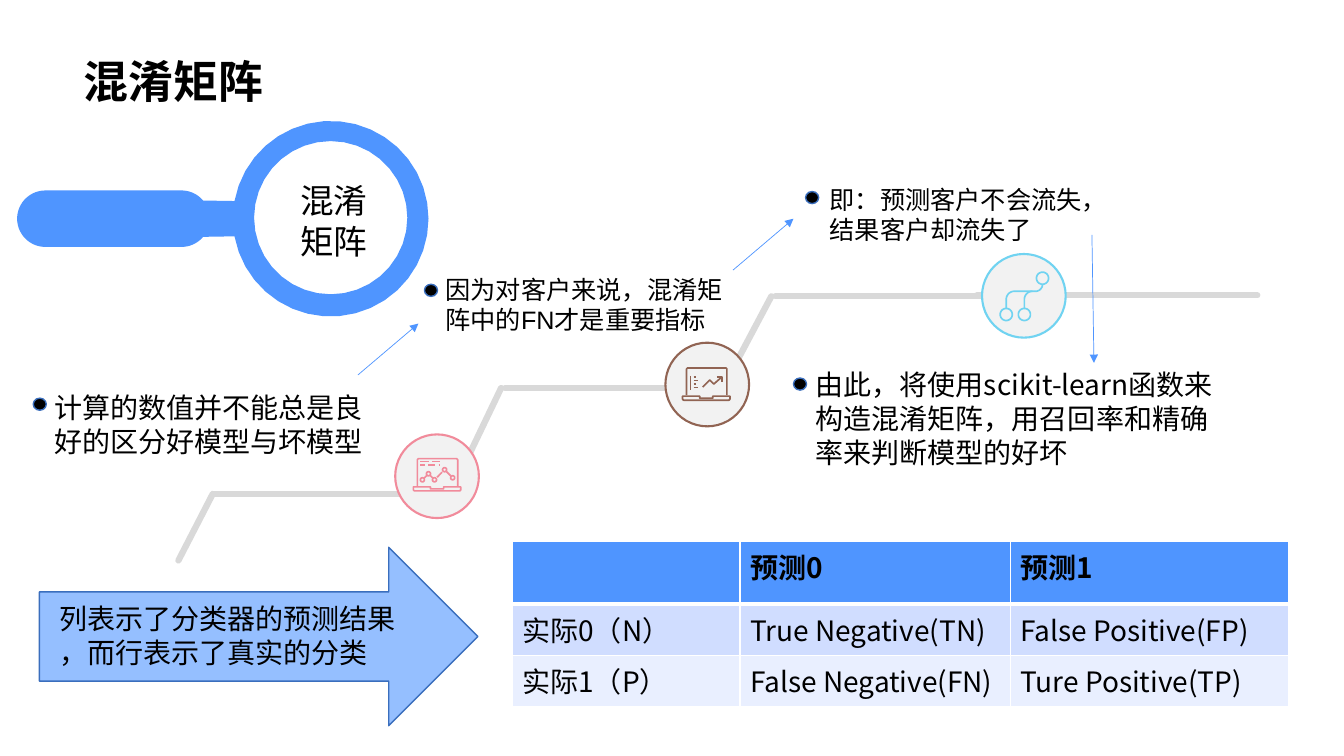
from math import cos, radians, sin
from lxml.etree import SubElement as Sub
from pptx import Presentation
from pptx.dml.color import RGBColor
from pptx.enum.shapes import MSO_CONNECTOR as Link, MSO_SHAPE as Shape
from pptx.enum.text import MSO_ANCHOR as Anchor, PP_ALIGN as Align
from pptx.oxml.ns import qn
from pptx.util import Inches, Pt


def paint(fmt, tone):
    fmt.solid()
    fmt.fore_color.rgb = RGBColor.from_string(tone)


def arc(x, y, r, start=0, end=360):
    turns = [radians(start + (end - start) * i / 36) for i in range(37)]
    return [(x + r * cos(t), y + r * sin(t)) for t in turns]


prs = Presentation()
prs.slide_width, prs.slide_height = Inches(13.33), Inches(7.5)
slide = prs.slides.add_slide(prs.slide_layouts[5])
shapes = slide.shapes
BLUE, EDGE, BLACK, GREY = "4F95FF", "3A6EBD", "000000", "D9D9D9"
SANS = "Noto Sans CJK SC"
texts = []

title = shapes.title
title.left, title.top = Inches(0.73), Inches(0)
title.width, title.height = Inches(11.87), Inches(1.12)
title.text_frame.text = "混淆矩阵"
title.text_frame.vertical_anchor = Anchor.BOTTOM
title.text_frame.paragraphs[0].line_spacing = 0.9
texts.append((title.text_frame, 32, "Arial", True))

roads = [
    (7.3, 3.6, 7.65, 2.94), (7.69, 2.94, 9.87, 2.94), (9.69, 2.93, 12.47, 2.93),
    (4.51, 4.81, 4.97, 3.85), (5.01, 3.85, 7.19, 3.85),
    (1.77, 5.56, 2.11, 4.9), (2.13, 4.9, 4.3, 4.9),
]
arrows = [(3.55, 3.72, 4.15, 3.21), (7.27, 2.68, 7.87, 2.17), (10.83, 2.33, 10.85, 3.6)]
for ends in roads + arrows:
    line = shapes.add_connector(Link.STRAIGHT, *map(Inches, ends))
    road = ends in roads
    paint(line.line.fill, GREY if road else BLUE)
    line.line.width = Pt(4.5 if road else 0.5)
    props = line._element.spPr
    stroke = props.find(qn("a:ln"))
    if road:
        stroke.set("cap", "rnd")
    else:
        Sub(stroke, qn("a:tailEnd"), type="triangle")
    Sub(props, qn("a:effectLst"))

forms = [
    (Shape.OVAL, 6.6, 3.4, 0.83, 0.83, "F2F2F2", "916453", 1.5),
    (Shape.OVAL, 3.92, 4.31, 0.83, 0.83, "F2F2F2", "F18B9B", 1.5),
    (Shape.OVAL, 9.74, 2.52, 0.83, 0.83, "F2F2F2", "70D3F1", 1.5),
    (Shape.RIGHT_ARROW, 0.39, 5.43, 4.35, 1.77, "95BFFF", EDGE, 1),
]
for x, y in [(0.33, 3.95), (4.21, 2.82), (7.99, 1.9), (7.87, 3.75)]:
    forms.append((Shape.FLOWCHART_CONNECTOR, x, y, 0.13, 0.12, BLACK, EDGE, 1))
for kind, x, y, w, h, fill, edge, size in forms:
    form = shapes.add_shape(kind, *map(Inches, (x, y, w, h)))
    form.shadow.inherit = False
    paint(form.fill, fill)
    paint(form.line.fill, edge)
    form.line.width = Pt(size)

lens = [
    arc(3.28, 2.17, 0.97, 169.6, -169.6) + arc(1.8, 2.17, 0.28, -40, -90)
    + arc(0.45, 2.17, 0.28, 270, 90) + arc(1.8, 2.17, 0.28, 90, 40),
    arc(3.28, 2.16, 0.76),
]
laptop = [
    [(0.05, 0.28), (0.05, 0.02), (0.06, 0.01), (0.44, 0.01), (0.45, 0.02), (0.45, 0.28)],
    [(0.01, 0.29), (0.18, 0.29), (0.18, 0.31), (0.31, 0.31), (0.31, 0.29),
     (0.48, 0.29), (0.48, 0.32), (0.47, 0.33), (0.02, 0.33), (0.01, 0.32), (0.01, 0.29)],
]
trend = [
    [(0.09, 0.09), (0.09, 0.23)],
    [(0.21, 0.2), (0.28, 0.13), (0.32, 0.17), (0.4, 0.1)],
    [(0.35, 0.1), (0.4, 0.1), (0.4, 0.15)],
]
for i in range(4):
    trend.append([(0.12, 0.1 + i * 0.035), (0.14 + i % 2 * 0.02, 0.1 + i * 0.035)])
nodes = [(0.1, 0.22), (0.16, 0.16), (0.22, 0.22), (0.32, 0.12), (0.4, 0.2)]
chart = [arc(x, y, 0.02) for x, y in nodes]
for (x, y), (u, v) in zip(nodes, nodes[1:]):
    chart.append([(x + (u - x) * k, y + (v - y) * k) for k in (0.25, 0.75)])
for x, u, y in [(0.08, 0.17, 0.04), (0.2, 0.27, 0.04), (0.08, 0.13, 0.07),
                (0.16, 0.23, 0.07), (0.26, 0.27, 0.07)]:
    chart.append([(x, y), (u, y)])
branch = [arc(x, y, 0.06) for x, y in [(0.42, 0.07), (0.06, 0.43), (0.24, 0.43)]]
branch += [
    arc(0.35, 0.13, 0.07, 0, 90) + arc(0.14, 0.28, 0.08, 270, 180) + [(0.06, 0.37)],
    arc(0.32, 0.28, 0.08, 270, 180) + [(0.24, 0.37)],
]
icons = [
    (0, 0, lens, BLUE, True), (6.76, 3.64, laptop + trend, "916453", False),
    (4.09, 4.54, laptop + chart, "F18B9B", False), (9.92, 2.69, branch, "70D3F1", False),
]
for left, top, paths, tone, solid in icons:
    build = None
    for path in paths:
        pts = [(Inches(left + x), Inches(top + y)) for x, y in path]
        if build:
            build.move_to(*pts[0])
        else:
            build = shapes.build_freeform(*pts[0])
        build.add_line_segments(pts[1:], close=solid)
    icon = build.convert_to_shape()
    icon.shadow.inherit = False
    if solid:
        paint(icon.fill, tone)
        icon.line.fill.background()
    else:
        icon.fill.background()
        paint(icon.line.fill, tone)
        icon.line.width = Pt(1.2)

notes = [
    (0.44, 3.83, 3.27, 0.77, 20, "Arial", "计算的数值并不能总是良好的区分好模型与坏模型"),
    (4.32, 2.67, 3.13, 0.71, 18, "Arial", "因为对客户来说，混淆矩阵中的FN才是重要指标"),
    (8.13, 1.78, 2.88, 0.71, 18, "Arial", "即：预测客户不会流失，结果客户却流失了"),
    (2.88, 1.74, 1.01, 0.91, 24, "Arial", "混淆矩阵"),
    (7.99, 3.6, 4.2, 1.11, 20, SANS,
     "由此，将使用scikit-learn函数来构造混淆矩阵，用召回率和精确率来判断模型的好坏"),
    (0.49, 5.92, 3.6, 0.77, 20, "Arial", "列表示了分类器的预测结果\n，而行表示了真实的分类"),
]
for x, y, w, h, size, font, words in notes:
    frame = shapes.add_textbox(*map(Inches, (x, y, w, h))).text_frame
    frame.word_wrap = True
    frame.text = words
    texts.append((frame, size, font, False))

rows = [
    ("", "预测0", "预测1"),
    ("实际0（N）", "True Negative(TN)", "False Positive(FP)"),
    ("实际1（P）", "False Negative(FN)", "Ture Positive(TP)"),
]
grid = shapes.add_table(3, 3, *map(Inches, (5.08, 5.37, 7.7, 1.64))).table
for col, w in zip(grid.columns, (2.26, 2.68, 2.76)):
    col.width = Inches(w)
for r, (row, h, tone) in enumerate(zip(rows, (0.62, 0.51, 0.51), (BLUE, "D0DDFF", "E9EFFF"))):
    grid.rows[r].height = Inches(h)
    for c, words in enumerate(row):
        cell = grid.cell(r, c)
        cell.text_frame.text = words
        texts.append((cell.text_frame, 20, SANS, r == 0))
        props = cell._tc.get_or_add_tcPr()
        for side in "LRTB":
            thick = (r, side) in [(0, "B"), (1, "T")]
            edge = Sub(props, qn("a:ln" + side), w=str(Pt(3 if thick else 1)))
            Sub(Sub(edge, qn("a:solidFill")), qn("a:srgbClr"), val="FFFFFF")
        paint(cell.fill, tone)

for frame, size, font, bold in texts:
    for para in frame.paragraphs:
        para.alignment = Align.LEFT
        for run in para.runs:
            run.font.size, run.font.name, run.font.bold = Pt(size), font, bold
            paint(run.font.fill, BLACK)
            Sub(run.font._element, qn("a:ea"), typeface=SANS)

prs.save("out.pptx")
